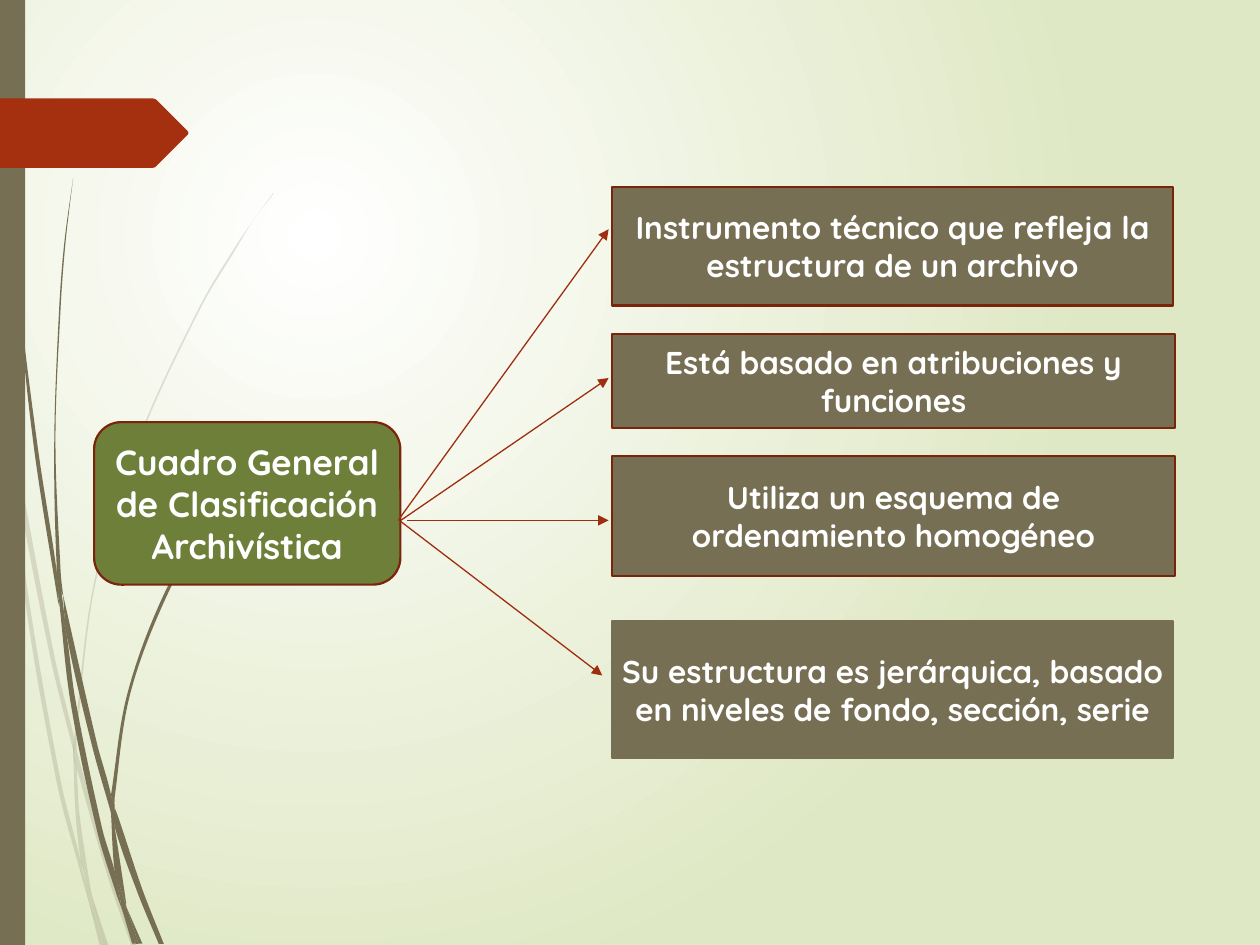
from dataclasses import dataclass

from lxml import etree
from pptx import Presentation
from pptx.dml.color import RGBColor
from pptx.enum.shapes import MSO_CONNECTOR, MSO_SHAPE
from pptx.enum.text import MSO_ANCHOR, PP_ALIGN
from pptx.oxml.ns import qn
from pptx.util import Pt

RECT = MSO_SHAPE.RECTANGLE
ROUNDED = MSO_SHAPE.ROUNDED_RECTANGLE
STRAIGHT = MSO_CONNECTOR.STRAIGHT
MIDDLE = MSO_ANCHOR.MIDDLE
CENTER = PP_ALIGN.CENTER


@dataclass(frozen=True)
class Theme:
    font: str = "Quicksand"
    topic_size: int = 20
    trait_size: int = 18
    white: str = "FFFFFF"
    mist: str = "DFE8C4"
    olive: str = "766F54"
    green: str = "6D7F39"
    red: str = "A53010"
    border: str = "7A240C"
    arrow: str = "9E2E0F"


THEME = Theme()

FAINT_WISPS = [
    ([(0, 203), (4.3, 231.8), (5.8, 252)], [(0, 215.3), (5, 247.7), (5.8, 252)]),
    ([(7.2, 248.4), (31, 374.4), (42.5, 421.9)],
     [(7.2, 248.4), (8.6, 270.7), (28.8, 375.8), (42.5, 431.3)]),
    ([(43.9, 429.1), (46.1, 437), (63.4, 498.2), (77.8, 540)],
     [(43.9, 439.2), (61.2, 499.7), (74.9, 540)]),
    ([(52.6, 511.9), (61.9, 540)], [(52.6, 511.9), (59.8, 540)]),
    ([(5.8, 252), (8.6, 270.7), (15.8, 337.7), (34.6, 445.7), (46.1, 491.8),
      (49.7, 509), (50.4, 514.1)],
     [(5.8, 252), (13.7, 338.4), (32.4, 447.1), (46.1, 499), (50.4, 514.1)]),
    ([(41.8, 431.3), (43.9, 437.8), (43.9, 439.2), (45.4, 465.1), (51.8, 508.3),
      (52.6, 511.9)],
     [(41.8, 431.3), (43.2, 465.1), (46.1, 491.8), (48.2, 498.2), (52.6, 511.9)]),
    ([(156.2, 110.2), (144.7, 126), (133.9, 141.8), (113.8, 175.7), (79.2, 250.6),
      (54, 331.9), (42.5, 420.5), (42.5, 421.9)],
     [(156.2, 110.9), (144.7, 126), (134.6, 142.6), (114.5, 176.4), (79.9, 251.3),
      (54.7, 332.6), (43.9, 420.5), (43.9, 429.1)]),
    ([(50.4, 514.1), (59, 540)], [(50.4, 514.1), (56.9, 540)]),
    ([(42.5, 421.9), (41.8, 431.3), (43.9, 437.8)],
     [(42.5, 421.9), (43.9, 429.1), (43.9, 439.2)]),
    ([(46.8, 491.8), (48.2, 498.2), (52.6, 511.9), (59.8, 540)],
     [(46.8, 491.8), (49.7, 509), (50.4, 514.1), (59, 540)]),
]

SOLID_WISPS = [
    ([(1.4, 0), (2.2, 34.6), (3.6, 79.2), (10.1, 167.8), (19.4, 255.6),
      (33.1, 343.4), (33.8, 346.3)],
     [(2.2, 0), (2.9, 34.6), (4.3, 78.5), (10.8, 167), (21.6, 255.6),
      (32.4, 326.2), (33.8, 346.3)]),
    ([(36, 339.8), (55.4, 424.8), (63.4, 454.3), (63.4, 464.4)],
     [(36, 339.8), (38.2, 363.6), (52.6, 426.2), (63.4, 464.4)]),
    ([(65.5, 461.5), (67.7, 467.3), (81.4, 508.3), (93.6, 539.3)],
     [(65.5, 461.5), (65.5, 472.3), (78.5, 509.8), (90.7, 539.3)]),
    ([(33.8, 343.4), (38.2, 363.6), (43.2, 400.3), (58.3, 473), (65.5, 497.5),
      (69.1, 516.2), (69.8, 519.8)],
     [(33.8, 343.4), (40.3, 401), (55.4, 474.5), (66.2, 509.8), (69.8, 519.8)]),
    ([(41.8, 101.5), (36.7, 139), (33.8, 176.4), (31, 251.3), (32.4, 323.3),
      (35.3, 339.8)],
     [(41.8, 101.5), (37.4, 139), (34.6, 176.4), (31.7, 251.3), (34.6, 326.2),
      (36, 339.8)]),
    ([(72, 517.7), (81.4, 539.3)], [(72, 517.7), (79.2, 539.3)]),
    ([(32.4, 323.3), (35.3, 339.8), (38.2, 363.6)],
     [(32.4, 323.3), (32.4, 326.2), (33.8, 343.4), (38.2, 363.6)]),
    ([(154.8, 247.7), (146.2, 257.8), (137.5, 268.6), (121, 291.6), (92.9, 341.3),
      (72.7, 396.7), (63.4, 454.3)],
     [(155.5, 247.7), (146.2, 258.5), (137.5, 269.3), (121.7, 292.3), (94.3, 342.7),
      (74.2, 397.4), (65.5, 455.8), (65.5, 461.5)]),
    ([(69.8, 519.8), (75.6, 539.3)], [(69.8, 519.8), (77.8, 539.3)]),
    ([(63.4, 464.4), (64.8, 468.7), (65.5, 472.3), (72, 515.5), (72, 517.7)],
     [(63.4, 464.4), (65.5, 497.5), (69.1, 508.3), (72, 517.7)]),
    ([(63.4, 454.3), (63.4, 464.4), (65.5, 472.3)],
     [(63.4, 454.3), (65.5, 461.5), (65.5, 472.3)]),
    ([(65.5, 497.5), (69.1, 508.3), (72, 517.7), (79.2, 539.3)],
     [(65.5, 497.5), (69.1, 516.2), (69.8, 519.8), (77.8, 539.3)]),
]

RIBBON = [(0, 56.2), (87.1, 56.2), (88.6, 56.6), (89.3, 57), (107.3, 75),
          (107.7, 76), (107.3, 77), (89.3, 95), (88.6, 95.6), (87.1, 96), (0, 96)]

TRAITS = [
    ("Instrumento técnico que refleja la estructura de un archivo",
     106.9, 320.9, 67.7, THEME.border),
    ("Está basado en atribuciones y funciones", 190.8, 322, 54, THEME.border),
    ("Utiliza un esquema de ordenamiento homogéneo", 260.6, 322, 68.4, THEME.border),
    ("Su estructura es jerárquica, basado en niveles de fondo, sección, serie",
     355, 320.9, 78.2, THEME.olive),
]

ARROWS = [
    ((227.5, 297.4), (347.8, 131)),
    ((229, 297.4), (347.8, 216)),
    ((232.6, 297.4), (347.8, 297.4)),
    ((229, 298), (344.2, 386)),
]


def rgb(color):
    return RGBColor.from_string(color)


def paint(sp, color, line=None):
    sp.shadow.inherit = False
    sp.fill.solid()
    sp.fill.fore_color.rgb = rgb(color)
    if line:
        sp.line.color.rgb = rgb(line)
        sp.line.width = Pt(1.25)
    else:
        sp.line.fill.background()


def set_background(s):
    fill = s.background.fill
    fill.gradient()
    for stop, color in zip(fill.gradient_stops, (THEME.white, THEME.mist)):
        stop.color.rgb = rgb(color)
    grad = s.element.find(".//" + qn("a:gradFill"))
    radial = etree.Element(qn("a:path"), path="circle")
    etree.SubElement(radial, qn("a:fillToRect"),
                     l="50000", t="50000", r="100000", b="100000")
    grad.replace(grad.find(qn("a:lin")), radial)


def edge_controls(points):
    pts = [complex(*point) for point in points]
    ends = [pts[0]] + pts + [pts[-1]]
    tangents = [(b - a) / abs(b - a) for a, b in zip(ends, ends[2:])]
    return [(a + ta * abs(b - a) / 3, b - tb * abs(b - a) / 3)
            for a, b, ta, tb in zip(pts, pts[1:], tangents, tangents[1:])]


def bend_segments(sp, controls):
    for segment, pair in zip(list(sp.element.iter(qn("a:lnTo"))), controls):
        if pair:
            curve = etree.Element(qn("a:cubicBezTo"))
            for z in pair:
                etree.SubElement(curve, qn("a:pt"), x=str(Pt(z.real) - sp.left),
                                 y=str(Pt(z.imag) - sp.top))
            curve.append(segment[0])
            segment.getparent().replace(segment, curve)


def add_outline(s, points, color):
    pts = [(Pt(x), Pt(y)) for x, y in points]
    builder = s.shapes.build_freeform(*pts[0])
    builder.add_line_segments(pts[1:], close=True)
    sp = builder.convert_to_shape()
    paint(sp, color)
    return sp


def add_wisps(s, wisps, alpha=None):
    for outer, inner in wisps:
        back = inner[::-1]
        meets = outer[-1] == back[0]
        sp = add_outline(s, outer + back[meets:], THEME.olive)
        join = [] if meets else [None]
        bend_segments(sp, edge_controls(outer) + join + edge_controls(back))
        if alpha:
            clr = sp.element.spPr.find(qn("a:solidFill")).find(qn("a:srgbClr"))
            etree.SubElement(clr, qn("a:alpha"), val=str(alpha * 1000))


def add_box(s, kind, box, color, line=None, text="", size=None):
    sp = s.shapes.add_shape(kind, *map(Pt, box))
    paint(sp, color, line)
    if text:
        tf = sp.text_frame
        tf.word_wrap = True
        tf.vertical_anchor = MIDDLE
        tf.margin_left = tf.margin_right = Pt(5.4)
        tf.margin_top = tf.margin_bottom = Pt(2.7)
        p = tf.paragraphs[0]
        p.text = text
        p.alignment = CENTER
        p.font.name, p.font.size, p.font.bold = THEME.font, Pt(size), True
        p.font.color.rgb = rgb(THEME.white)


def add_arrow(s, start, end):
    cx = s.shapes.add_connector(STRAIGHT, *map(Pt, start + end))
    cx.line.color.rgb = rgb(THEME.arrow)
    cx.line.width = Pt(0.75)
    ln = cx.element.spPr.find(qn("a:ln"))
    etree.SubElement(ln, qn("a:tailEnd"), type="triangle")
    etree.SubElement(cx.element.spPr, qn("a:effectLst"))


def main():
    prs = Presentation()
    prs.slide_width, prs.slide_height = Pt(720), Pt(540)
    s = prs.slides.add_slide(prs.slide_layouts[6])
    set_background(s)
    add_wisps(s, FAINT_WISPS, alpha=20)
    add_wisps(s, SOLID_WISPS)
    add_box(s, RECT, (0, 0, 14.4, 540), THEME.olive)
    add_outline(s, RIBBON, THEME.red)
    add_box(s, ROUNDED, (53.8, 241.2, 175, 92.9), THEME.green, THEME.border,
            "Cuadro General de Clasificación Archivística", THEME.topic_size)
    for text, top, width, height, line in TRAITS:
        add_box(s, RECT, (349.6, top, width, height), THEME.olive, line,
                text, THEME.trait_size)
    for start, end in ARROWS:
        add_arrow(s, start, end)
    prs.save("out.pptx")


if __name__ == "__main__":
    main()
